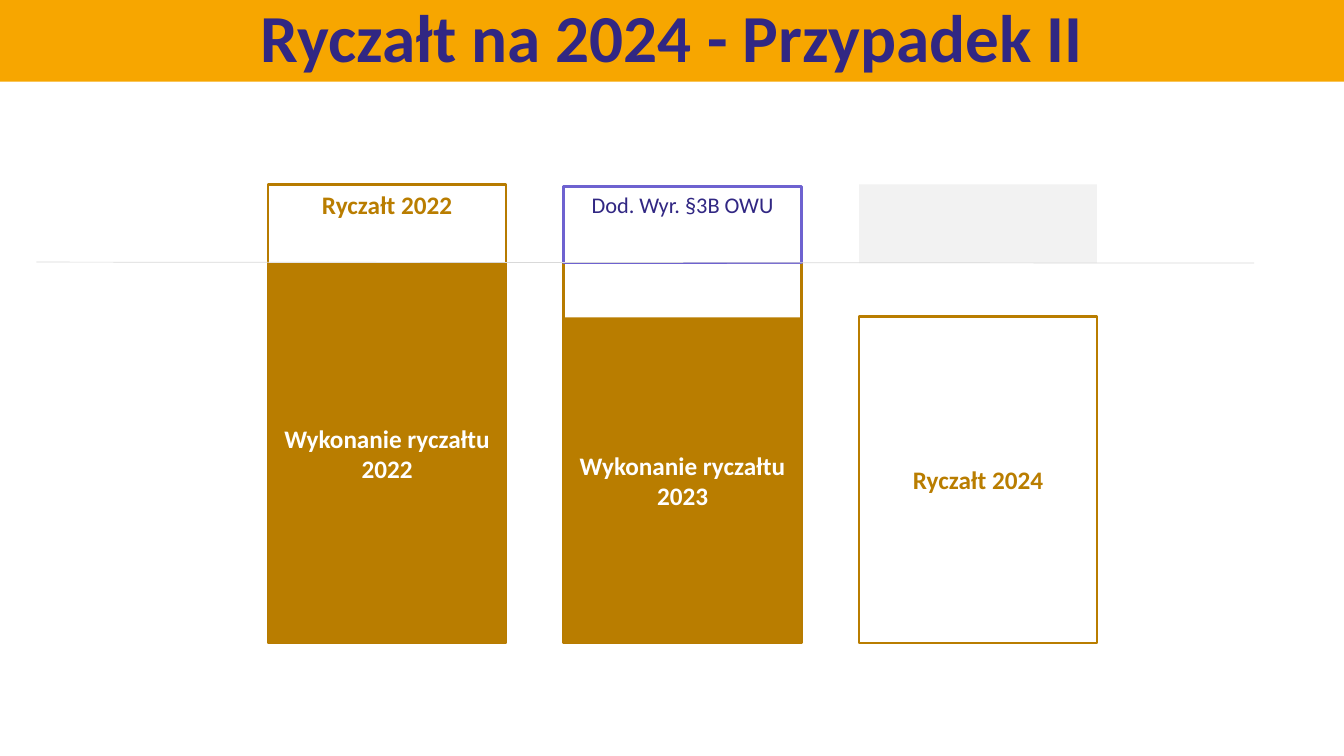
import pptx
import pptx.util
import pptx.dml.color
import pptx.enum.shapes
import pptx.enum.text
import pptx.oxml
from pptx.util import Inches

OCHRE = "B97D00"
NAVY = "312783"
WHITE = "FFFFFF"
FONT = "Calibri"
COLUMN_LEFT, COLUMN_STEP, COLUMN_WIDTH = 2.66, 2.93, 2.36
BASELINE, LIMIT = 6.38, 2.61


def color(value):
    return pptx.dml.color.RGBColor.from_string(value)


def write(shape, text, size=18, font_color=OCHRE, bold=True, middle=True, spacing=1.0):
    frame = shape.text_frame
    frame.word_wrap = True
    anchors = pptx.enum.text.MSO_ANCHOR
    frame.vertical_anchor = anchors.MIDDLE if middle else anchors.TOP
    paragraph = frame.paragraphs[0]
    paragraph.alignment = pptx.enum.text.PP_ALIGN.CENTER
    paragraph.line_spacing = spacing
    run = paragraph.add_run()
    run.text = text
    run.font.name = FONT
    run.font.size = pptx.util.Pt(size)
    run.font.bold = bold
    run.font.color.rgb = color(font_color)


class SlideBuilder:
    def __init__(self, slide, outline_width=1.75):
        self.slide = slide
        self.outline_width = outline_width

    def box(self, left, top, width, height, fill=None, outline=None):
        shape = self.slide.shapes.add_shape(
            pptx.enum.shapes.MSO_SHAPE.RECTANGLE,
            Inches(left), Inches(top), Inches(width), Inches(height))
        shape.shadow.inherit = False
        if fill:
            shape.fill.solid()
            shape.fill.fore_color.rgb = color(fill)
        else:
            shape.fill.background()
        if outline:
            shape.line.color.rgb = color(outline)
            shape.line.width = pptx.util.Pt(self.outline_width)
        else:
            shape.line.fill.background()
        return shape

    def bar(self, column, top, bottom=BASELINE, fill=None, outline=None):
        left = COLUMN_LEFT + column * COLUMN_STEP
        return self.box(left, top, COLUMN_WIDTH, bottom - top, fill, outline)

    def line(self, start, end, line_color, width):
        connector = self.slide.shapes.add_connector(
            pptx.enum.shapes.MSO_CONNECTOR.STRAIGHT,
            *(Inches(value) for value in (*start, *end)))
        connector.line.color.rgb = color(line_color)
        connector.line.width = pptx.util.Pt(width)
        properties = connector.element.spPr
        properties.append(pptx.oxml.parse_xml(
            '<a:effectLst xmlns:a="http://schemas.openxmlformats.org/drawingml/2006/main"/>'))


def main():
    presentation = pptx.Presentation()
    presentation.slide_width = Inches(13.33)
    presentation.slide_height = Inches(7.5)
    builder = SlideBuilder(presentation.slides.add_slide(presentation.slide_layouts[6]))

    allowance_2022 = builder.bar(0, 1.83, fill=WHITE, outline="B77B00")
    write(allowance_2022, "Ryczałt 2022", middle=False)

    title = builder.box(0, 0, 13.33, 0.81, fill="F7A600")
    write(title, "Ryczałt na 2024 - Przypadek II", size=48, font_color=NAVY, spacing=0.9)

    performed_2022 = builder.bar(0, LIMIT, fill=OCHRE)
    write(performed_2022, "Wykonanie ryczałtu 2022", font_color=WHITE)

    builder.bar(1, LIMIT, outline="B77B00")
    supplement = builder.bar(1, 1.85, LIMIT, fill=WHITE, outline="6E62D0")
    write(supplement, "Dod. Wyr. §3B OWU", size=16, font_color=NAVY, bold=False, middle=False)

    allowance_2024 = builder.bar(2, 3.14, outline=OCHRE)
    write(allowance_2024, "Ryczałt 2024")

    performed_2023 = builder.bar(1, 3.15, fill=OCHRE)
    write(performed_2023, "Wykonanie ryczałtu 2023", font_color=WHITE)

    builder.bar(2, 1.83, LIMIT, fill="F2F2F2")
    builder.line((0.36, 2.6), (12.44, LIMIT), "D9D9D9", 0.5)

    presentation.save("out.pptx")


if __name__ == "__main__":
    main()
